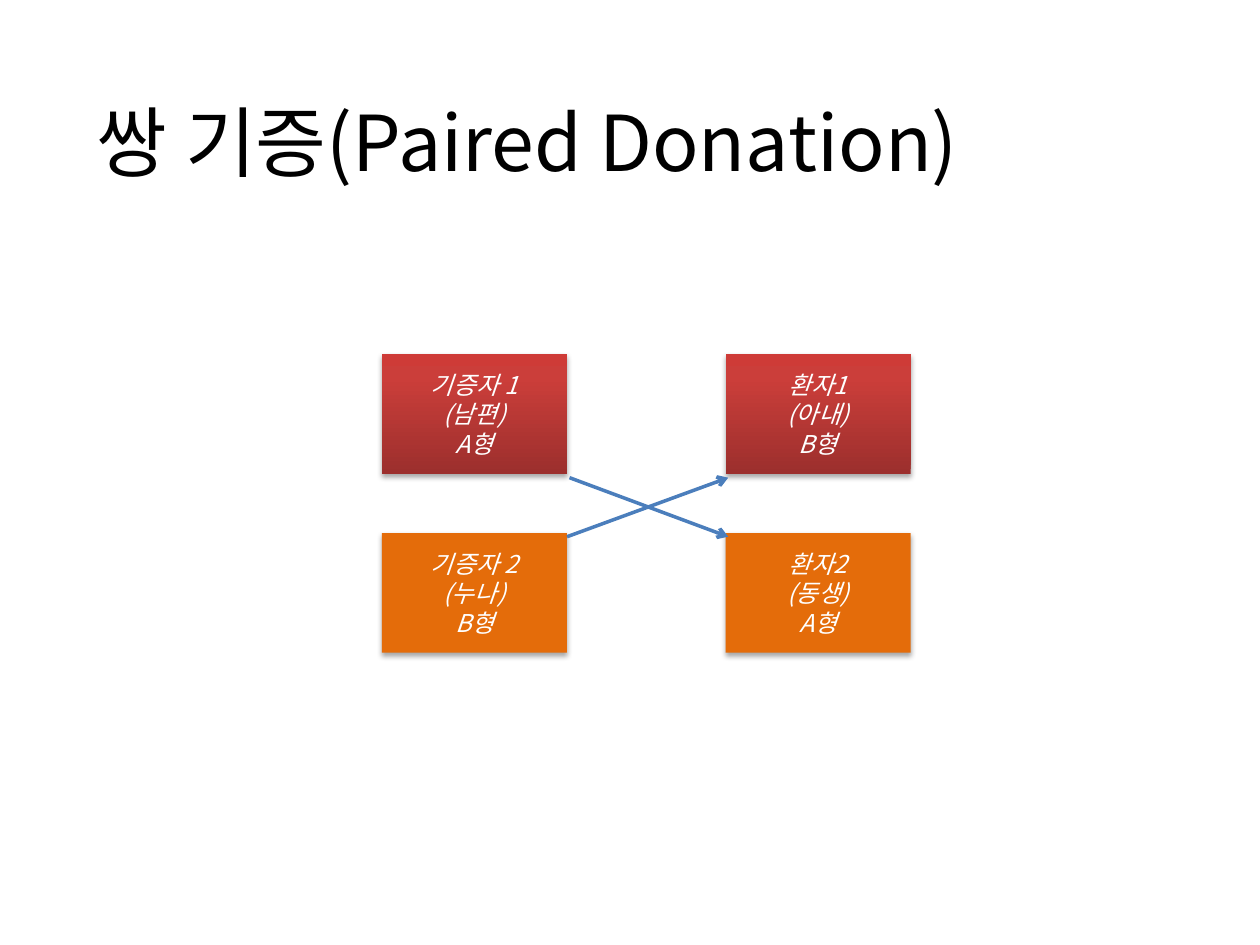
from copy import deepcopy

from lxml.etree import SubElement
from pptx import Presentation
from pptx.dml.color import RGBColor
from pptx.enum.shapes import MSO_CONNECTOR as Connector, MSO_SHAPE as Shape
from pptx.enum.text import MSO_ANCHOR as Anchor, PP_ALIGN as Align
from pptx.oxml.ns import qn
from pptx.util import Cm, Pt

FONT = "Noto Sans CJK KR"
RED_STOPS = [(0, "9C2F2D"), (0.8, "CB3E3A"), (1, "CE3B37")]
ORANGE = "E46C0A"
PAIRS = [
    (RED_STOPS, ["기증자 1", "(남편)", "A형"], ["환자1", "(아내)", "B형"]),
    (ORANGE, ["기증자 2", "(누나)", "B형"], ["환자2", "(동생)", "A형"]),
]
CARD_WIDTH, CARD_HEIGHT = 3.73, 2.41
COLUMN_STEP, ROW_STEP = 6.93, 3.61


def color(value):
    return RGBColor.from_string(value)


def write(frame, lines, size, ink="000000", italic=None, align=Align.LEFT, spacing=None):
    frame.word_wrap = True
    frame.vertical_anchor = Anchor.MIDDLE
    for index, line in enumerate(lines):
        para = frame.paragraphs[0] if index == 0 else frame.add_paragraph()
        para.alignment = align
        para.line_spacing = spacing
        span = para.add_run()
        span.text = line
        span.font.name = FONT
        span.font.size = Pt(size)
        span.font.italic = italic
        span.font.color.rgb = color(ink)
        SubElement(span.font._element, qn("a:ea"), typeface=FONT)


def fill_gradient(box, stops):
    box.fill.gradient()
    box.fill.gradient_angle = 90
    stop_list = box._element.spPr.find(".//" + qn("a:gsLst"))
    while len(stop_list) < len(stops):
        stop_list.append(deepcopy(stop_list[0]))
    for stop, (position, value) in zip(box.fill.gradient_stops, stops):
        stop.position = position
        stop.color.rgb = color(value)


def add_shadow(box):
    box.shadow.inherit = False
    effects = box._element.spPr.find(qn("a:effectLst"))
    shadow = SubElement(effects, qn("a:outerShdw"), blurRad=str(Pt(3.1)),
                        dist=str(Pt(1.8)), dir="5400000", rotWithShape="0")
    shade = SubElement(shadow, qn("a:srgbClr"), val="000000")
    SubElement(shade, qn("a:alpha"), val="35000")


def add_card(page, left, top, lines, fill):
    box = page.shapes.add_shape(Shape.RECTANGLE, Cm(left), Cm(top),
                                Cm(CARD_WIDTH), Cm(CARD_HEIGHT))
    if isinstance(fill, str):
        box.fill.solid()
        box.fill.fore_color.rgb = color(fill)
    else:
        fill_gradient(box, fill)
    box.line.fill.background()
    add_shadow(box)
    write(box.text_frame, lines, 14, ink="FFFFFF", italic=True, align=Align.CENTER)


def add_arrow(page, start, end):
    arrow = page.shapes.add_connector(Connector.STRAIGHT, *map(Cm, start + end))
    arrow.line.color.rgb = color("4B7EBC")
    arrow.line.width = Pt(2)
    SubElement(arrow.line._get_or_add_ln(), qn("a:tailEnd"), type="arrow")
    SubElement(arrow._element.spPr, qn("a:effectLst"))


def add_title(page, left, top, width, height):
    title = page.shapes.title
    title.left, title.top, title.width, title.height = map(Cm, (left, top, width, height))
    write(title.text_frame, ["쌍 기증(Paired Donation)"], 44, spacing=0.9)


def add_exchange(page, left, top):
    for row, (fill, donor, patient) in enumerate(PAIRS):
        for column, lines in enumerate((donor, patient)):
            add_card(page, left + column * COLUMN_STEP, top + row * ROW_STEP, lines, fill)
    upper, lower = top + 2.49, top + 3.68
    add_arrow(page, (left + 3.73, lower), (left + 6.98, upper))
    add_arrow(page, (left + 3.78, upper), (left + 6.98, lower))


def main():
    deck = Presentation()
    deck.slide_width, deck.slide_height = Cm(25.4), Cm(19.05)
    page = deck.slides.add_slide(deck.slide_layouts[5])
    add_title(page, 1.7, 1.12, 21.9, 3.68)
    add_exchange(page, 7.7, 7.14)
    deck.save("out.pptx")


if __name__ == "__main__":
    main()
